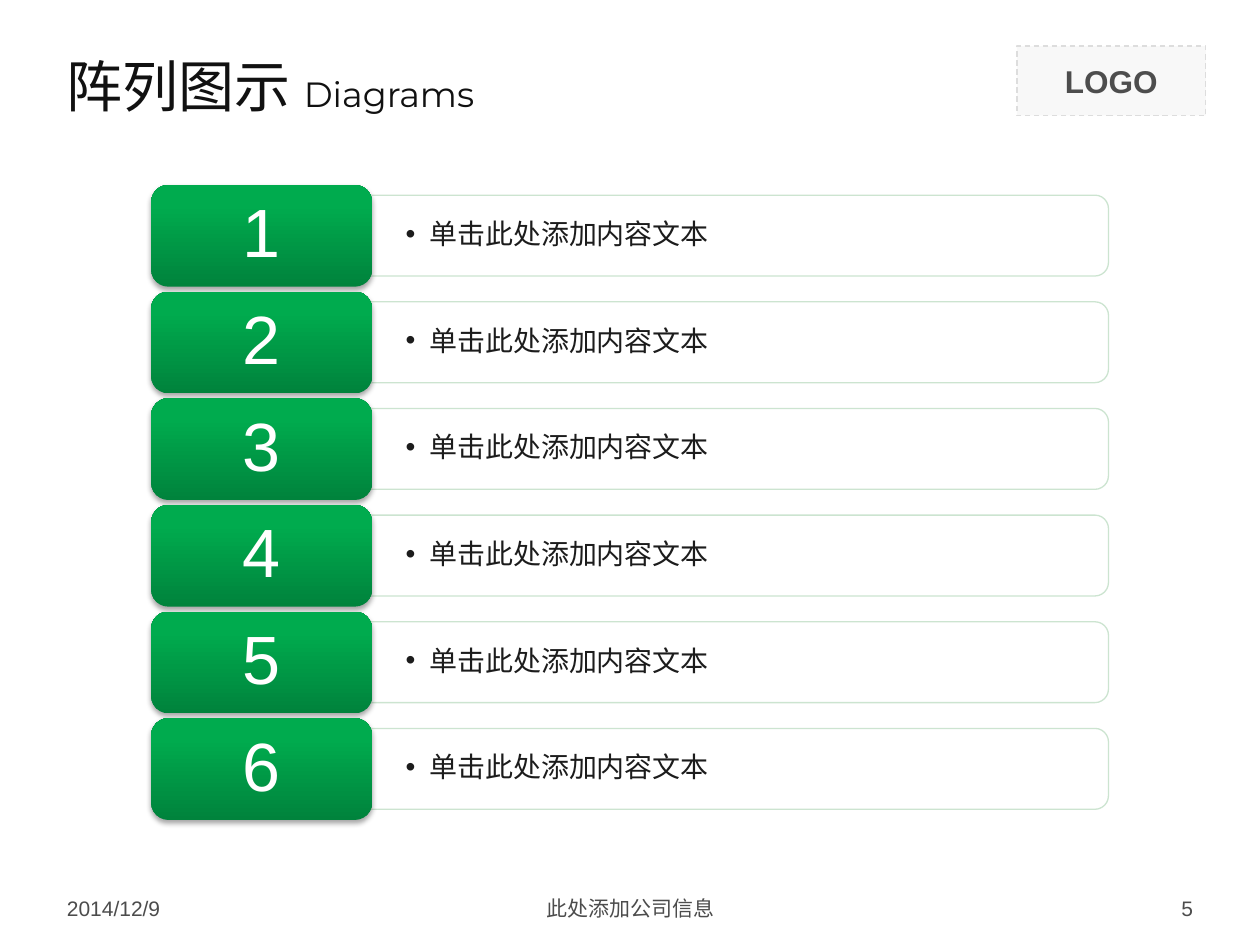
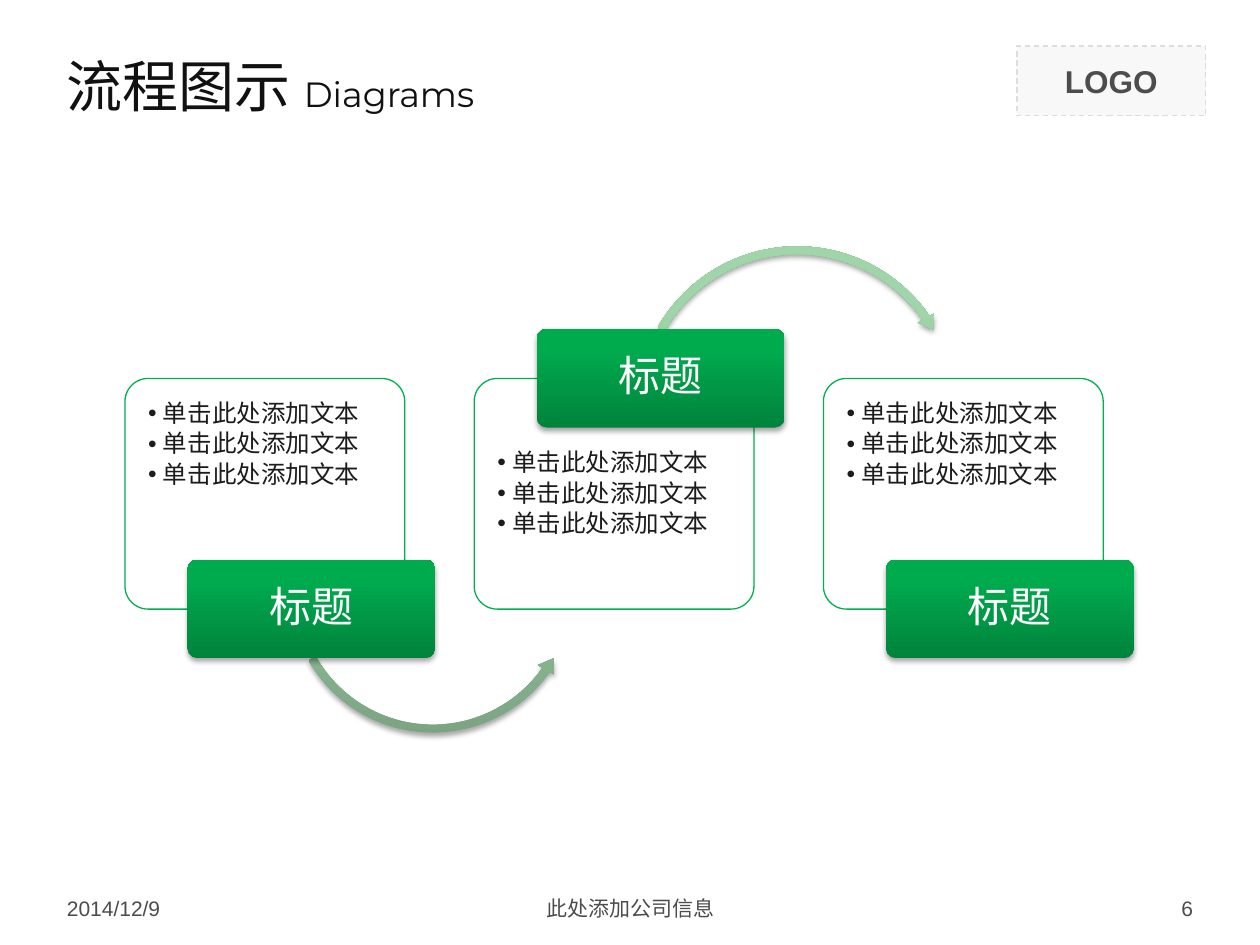
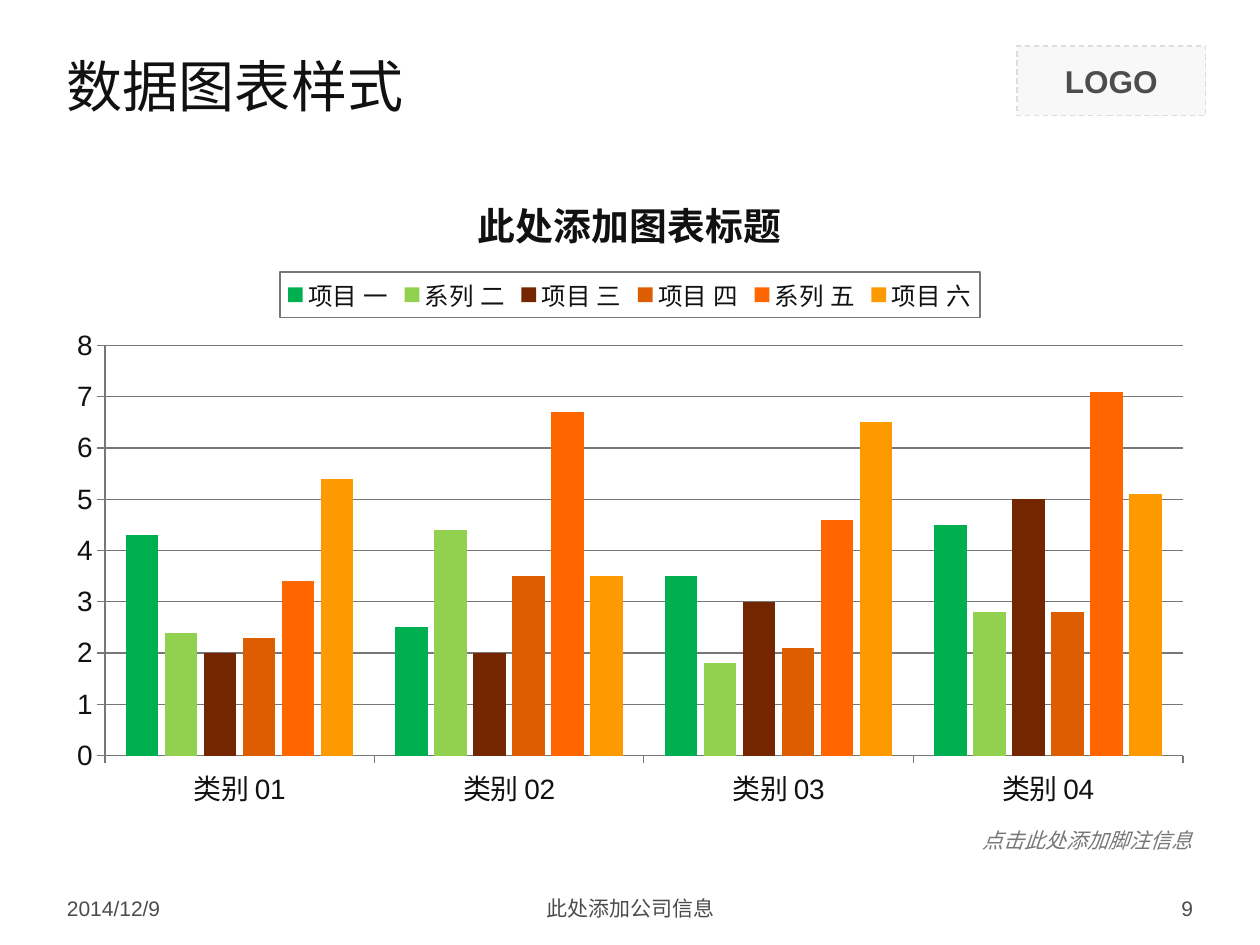
"""Build three slides: a numbered list, a process diagram and a column chart."""
from lxml.etree import SubElement
from pptx import Presentation
from pptx.chart.data import CategoryChartData
from pptx.dml.color import RGBColor
from pptx.enum.chart import XL_CHART_TYPE, XL_LEGEND_POSITION, XL_TICK_MARK
from pptx.enum.dml import MSO_LINE
from pptx.enum.shapes import MSO_SHAPE
from pptx.enum.text import MSO_ANCHOR, MSO_AUTO_SIZE, PP_ALIGN
from pptx.oxml import parse_xml
from pptx.oxml.ns import nsdecls, qn
from pptx.util import Cm, Pt

COLORS = {
    "title": "111111", "body": "1C1C1C", "footer": "4C4C4C", "logo": "4D4D4D",
    "white": "FFFFFF", "logo_fill": "F8F8F8", "logo_line": "DDDDDD",
    "bar_line": "CCE4D0", "card_line": "00B050", "grey": "777777",
    "green_dark": "00833C", "green": "00AB4E",
    "arrow_dark": "7BA382", "arrow": "A0D4A9",
}
RGB = {name: RGBColor.from_string(value) for name, value in COLORS.items()}
LEFT, CENTER, RIGHT = PP_ALIGN.LEFT, PP_ALIGN.CENTER, PP_ALIGN.RIGHT


def text(tf, lines, size=12, color="footer", font="Arial", bold=None, italic=None,
         align=LEFT, anchor=MSO_ANCHOR.MIDDLE, inset=(0.25, 0.13), top=None,
         indent=0, after=0, small=""):
    tf.word_wrap, tf.auto_size, tf.vertical_anchor = True, MSO_AUTO_SIZE.NONE, anchor
    tf.margin_left = tf.margin_right = Cm(inset[0])
    tf.margin_top = Cm(inset[1] if top is None else top)
    tf.margin_bottom = Cm(inset[1])
    for i, line in enumerate(lines):
        p = tf.add_paragraph() if i else tf.paragraphs[0]
        p.alignment = align
        pPr = p._p.get_or_add_pPr()
        if after:
            p.line_spacing = 0.9
            spacing = SubElement(pPr, qn("a:spcAft"))
            SubElement(spacing, qn("a:spcPct"), val=str(after * 1000))
        if indent:
            pPr.set("marL", str(Cm(indent)))
            pPr.set("indent", str(-Cm(indent)))
            SubElement(pPr, qn("a:buFont"), typeface="Arial")
            SubElement(pPr, qn("a:buChar"), char="•")
        for part, pt in ((line, size), (small, 20)):
            if part:
                r = p.add_run()
                r.text = part
                r.font.size, r.font.name = Pt(pt), font
                r.font.bold, r.font.italic = bold, italic
                r.font.color.rgb = RGB[color]


def shape(s, kind, x, y, w, h, fill="white", shade=None, line=None, alpha=None, adj=()):
    sp = s.shapes.add_shape(kind, Cm(x), Cm(y), Cm(w), Cm(h))
    for i, value in enumerate(adj):
        sp.adjustments[i] = value
    sp.shadow.inherit = False
    spPr = sp.element.spPr
    if shade:
        sp.fill.gradient()
        sp.fill.gradient_angle = 90
        for stop, name, position in zip(sp.fill.gradient_stops, (shade, fill), (0, 0.8)):
            stop.color.rgb, stop.position = RGB[name], position
        shadow = SubElement(spPr.find(qn("a:effectLst")), qn("a:outerShdw"), blurRad=str(Pt(3.1)),
                            dist=str(Pt(1.8)), dir="5400000", rotWithShape="0")
        black = SubElement(shadow, qn("a:srgbClr"), val="000000")
        SubElement(black, qn("a:alpha"), val="35000")
    else:
        sp.fill.solid()
        sp.fill.fore_color.rgb = RGB[fill]
    if alpha:
        SubElement(spPr.find(".//" + qn("a:srgbClr")), qn("a:alpha"), val=str(alpha * 1000))
    if line:
        sp.line.color.rgb, sp.line.width = RGB[line], Pt(0.75)
    else:
        sp.line.fill.background()
    return sp


prs = Presentation()
prs.slide_width, prs.slide_height = Cm(25.4), Cm(19.05)

slides = []
for title, small, number in (("阵列图示 ", "Diagrams", "5"), ("流程图示 ", "Diagrams", "6"),
                             ("数据图表样式", "", "9")):
    s = prs.slides.add_slide(prs.slide_layouts[5])
    slides.append(s)
    logo = shape(s, MSO_SHAPE.RECTANGLE, 20.5, 0.93, 3.81, 1.4, "logo_fill", line="logo_line")
    logo.line.dash_style = MSO_LINE.DASH
    text(logo.text_frame, ["LOGO"], 18, "logo", bold=True, align=CENTER)
    sp = s.shapes.title
    sp.left, sp.top, sp.width, sp.height = Cm(1.1), Cm(0.71), Cm(23.22), Cm(2.01)
    text(sp.text_frame, [title], 32, "title", "Montserrat", small=small)
    for x, w, content, align in ((1.1, 5.92, "2014/12/9", LEFT),
                                 (8.68, 8.05, "此处添加公司信息", CENTER),
                                 (18.38, 5.92, number, RIGHT)):
        tb = s.shapes.add_textbox(Cm(x), Cm(17.93), Cm(w), Cm(0.74))
        text(tb.text_frame, [content], align=align)

array, process, data = slides

for i in range(6):
    y = 3.73 + 2.15 * i
    bar = shape(array, MSO_SHAPE.ROUND_2_SAME_RECTANGLE, 14.1, y - 6.41, 1.63, 14.86,
                line="bar_line", alpha=90)
    bar.rotation = 90
    tb = array.shapes.add_textbox(Cm(7.49), Cm(y + 0.28), Cm(14.78), Cm(1.47))
    text(tb.text_frame, ["单击此处添加内容文本"], 16, "body", inset=(0.69, 0.36),
         indent=0.48, after=15)
    tile = shape(array, MSO_SHAPE.ROUNDED_RECTANGLE, 3.05, y, 4.45, 2.05, "green", "green_dark")
    text(tile.text_frame, [str(i + 1)], 39, "white", align=CENTER, inset=(0.41, 0.2), after=35)

steps = (
    (11.28, 0.33, MSO_SHAPE.LEFT_CIRCULAR_ARROW, 5.74, 8.91, 5.97, (27, 3327, 21082, 90245, 32)),
    (6.63, 1.32, MSO_SHAPE.CIRCULAR_ARROW, 12.73, 4.86, 6.68, (24, 2948, 195297, 125755, 28)),
    (11.28, 0.33, None, 0, 0, 0, ()),
)
for i, (tile_y, top, arrow, arrow_x, arrow_y, size, adj) in enumerate(steps):
    x = 2.52 + 7.04 * i
    card = shape(process, MSO_SHAPE.ROUNDED_RECTANGLE, x, 7.63, 5.64, 4.65,
                 line="card_line", alpha=90, adj=[0.1])
    text(card.text_frame, ["单击此处添加文本"] * 3, 14, "body", anchor=MSO_ANCHOR.TOP,
         inset=(0.33, 0.33), top=top, indent=0.3, after=15)
    if arrow:
        shape(process, arrow, arrow_x, arrow_y, size, size, "arrow", "arrow_dark",
              adj=[value / 1000 for value in adj])
    tile = shape(process, MSO_SHAPE.ROUNDED_RECTANGLE, x + 1.26, tile_y, 5, 1.99,
                 "green", "green_dark", adj=[0.1])
    text(tile.text_frame, ["标题"], 24, "white", align=CENTER, inset=(0.13, 0.08), after=35)

series = (
    ("项目 一", "00B050", (4.3, 2.5, 3.5, 4.5)),
    ("系列 二", "92D050", (2.4, 4.4, 1.8, 2.8)),
    ("项目 三", "742600", (2, 2, 3, 5)),
    ("项目 四", "DC5E01", (2.3, 3.5, 2.1, 2.8)),
    ("系列 五", "FF6600", (3.4, 6.7, 4.6, 7.1)),
    ("项目 六", "FF9900", (5.4, 3.5, 6.5, 5.1)),
)
cd = CategoryChartData()
cd.categories = [f"类别 {n:02}" for n in range(1, 5)]
for name, color, values in series:
    cd.add_series(name, values)
chart = data.shapes.add_chart(XL_CHART_TYPE.COLUMN_CLUSTERED, Cm(1.09), Cm(3.33),
                              Cm(23.22), Cm(13.21), cd).chart
chart.font.size, chart.font.name = Pt(18), "Arial"
chart.font.color.rgb = RGB["title"]
chart.has_title = True
text_frame = chart.chart_title.text_frame
text_frame.text = "此处添加图表标题"
font = text_frame.paragraphs[0].runs[0].font
font.size, font.bold, font.name = Pt(21.6), True, "Arial"
font.color.rgb = RGB["title"]
chart.chart_title.include_in_layout = False

plot = chart.plots[0]
plot.gap_width, plot.overlap, plot.vary_by_categories = 130, -20, False
for ser, (name, color, values) in zip(plot.series, series):
    ser.format.fill.solid()
    ser.format.fill.fore_color.rgb = RGBColor.from_string(color)

chart.value_axis.minimum_scale, chart.value_axis.maximum_scale = 0, 8
chart.value_axis.major_unit = 1
for axis in (chart.category_axis, chart.value_axis):
    axis.major_tick_mark = XL_TICK_MARK.OUTSIDE
    axis.tick_labels.font.size = Pt(16)
    axis.tick_labels.font.color.rgb = RGB["title"]
for ln in (chart.category_axis.format.line, chart.value_axis.format.line,
           chart.value_axis.major_gridlines.format.line):
    ln.color.rgb, ln.width = RGB["grey"], Pt(0.75)

chart.has_legend = True
chart.legend.position = XL_LEGEND_POSITION.TOP
chart.legend.include_in_layout = False
chart.legend.font.size = Pt(14)
chart.legend.font.color.rgb = RGB["title"]
border = parse_xml(f'<c:spPr {nsdecls("c", "a")}><a:ln w="{Pt(0.75)}"><a:solidFill>'
                   f'<a:srgbClr val="{COLORS["grey"]}"/></a:solidFill></a:ln></c:spPr>')
chart.legend.font._element.getparent().getparent().getparent().addprevious(border)

tb = data.shapes.add_textbox(Cm(19.51), Cm(16.56), Cm(4.78), Cm(0.76))
text(tb.text_frame, ["点击此处添加脚注信息"], color="grey", italic=True, align=RIGHT,
     anchor=MSO_ANCHOR.TOP)
tb.text_frame.word_wrap, tb.text_frame.auto_size = False, MSO_AUTO_SIZE.SHAPE_TO_FIT_TEXT

prs.save("out.pptx")
